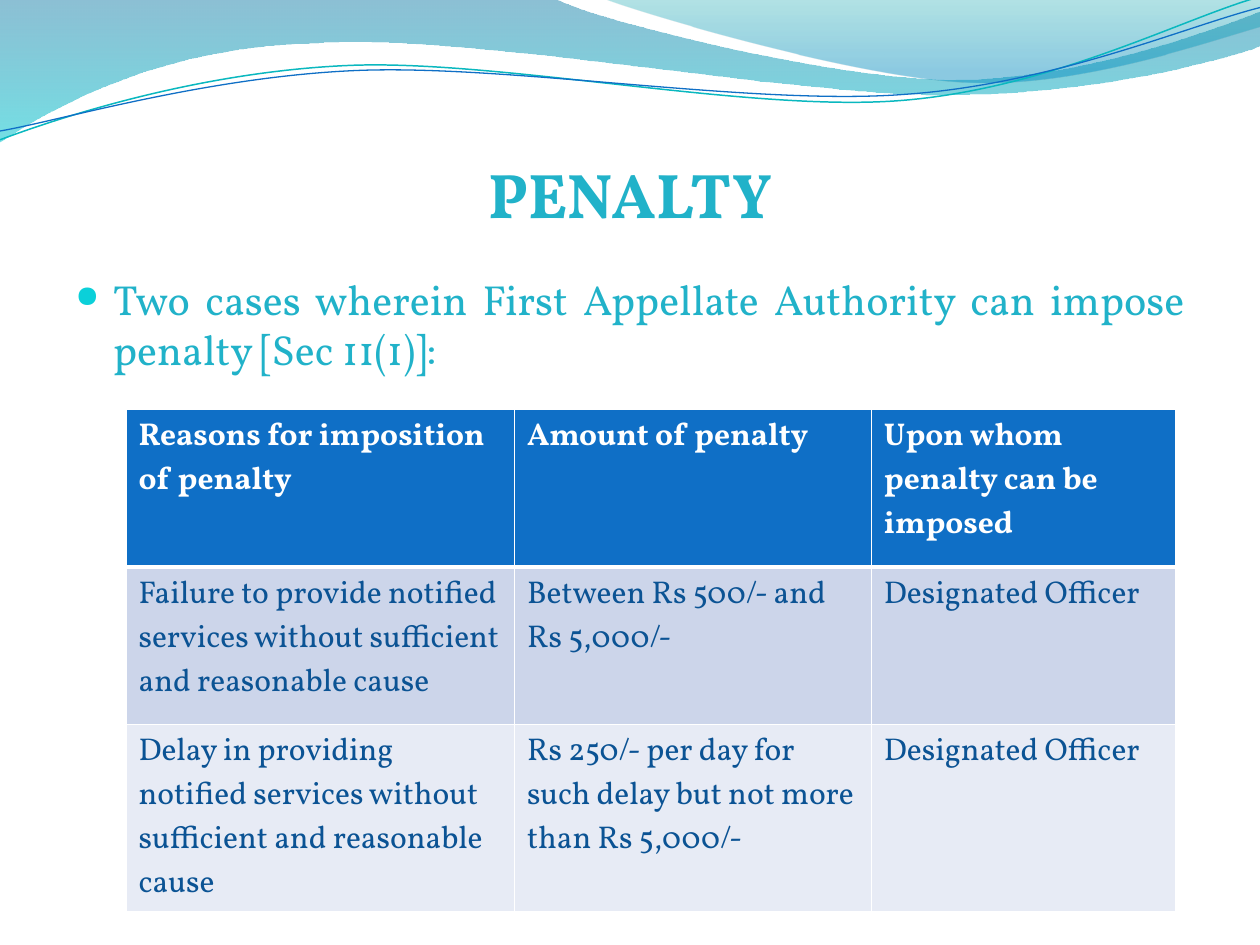
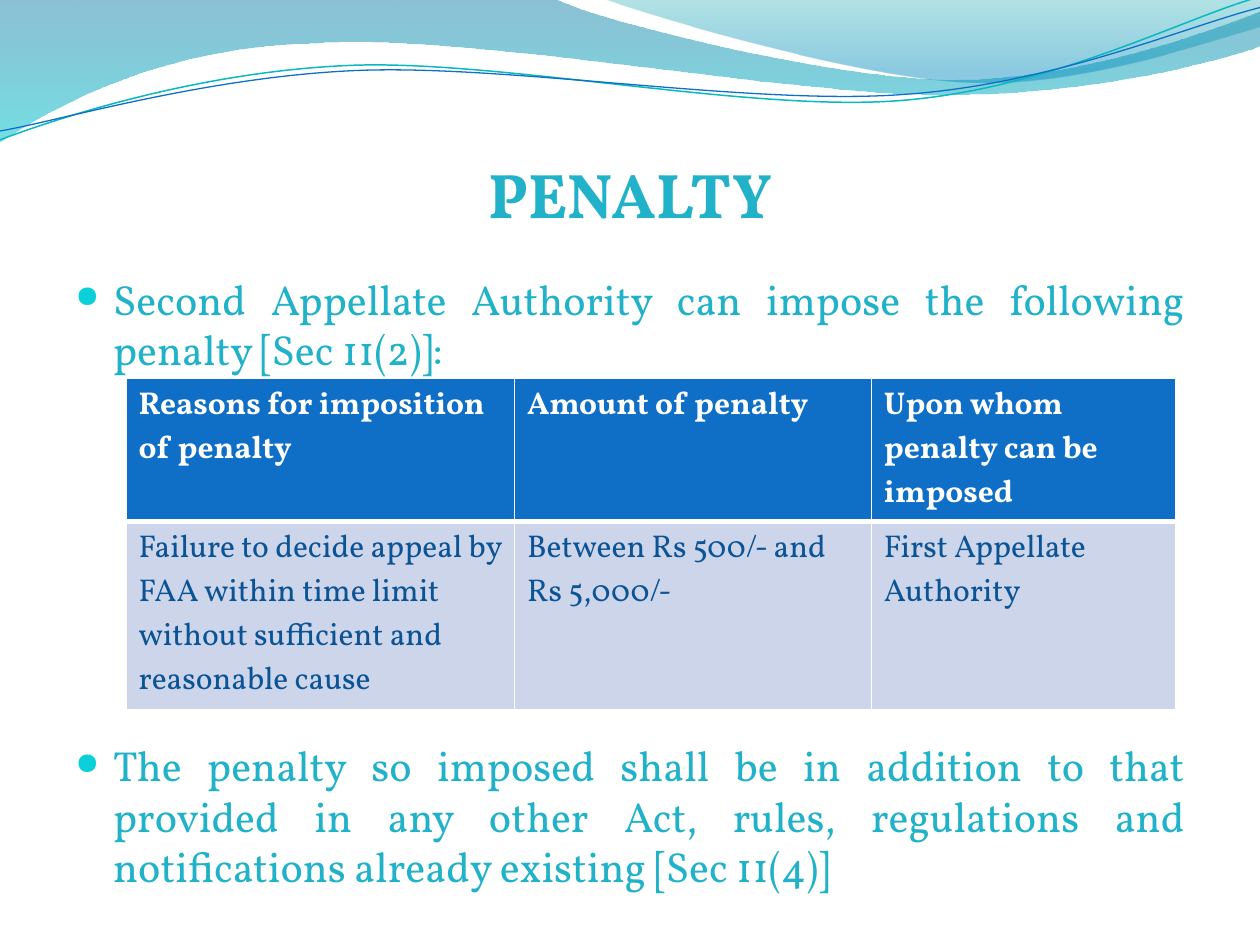
from lxml.etree import SubElement
from pptx import Presentation
from pptx.dml.color import RGBColor
from pptx.enum.text import MSO_ANCHOR as Anchor, MSO_AUTO_SIZE as AutoSize, PP_ALIGN as Align
from pptx.oxml.ns import qn
from pptx.util import Inches, Pt

FONT = "Vollkorn"
GRID_COLUMNS, GRID_ROWS = 100, 75
TITLE_ONLY = 5
COLORS = {
    "text": "21B2C9", "bullet": "0BD0D9", "header": "0F6FC6", "cell_text": "0B5394",
    "band_odd": "CCD5EA", "band_even": "E7EBF5", "white": "FFFFFF",
    "teal_line": "0AB8BF", "blue_line": "0F6FC6",
    "deep_blue": "0074A1", "aqua": "00C6CF", "green": "00A1A9", "sky": "008BBF",
}
WAVE_BANDS = [
    ([[(0, 0)], [(44, -0.1)],
      [(47.6, 1.7), (66.4, 6.3), (75.8, 6.3)], [(85.3, 6.3), (95.8, 2.6), (100, 0.9)],
      [(100.1, 3.6)],
      [(98.3, 4.4), (87, 7.6), (74.6, 7.5)], [(62.2, 7.5), (38.2, 2.8), (25.7, 3.4)],
      [(12.9, 3.6), (4.6, 8.3), (-0.1, 11.3)]],
     [(0, "deep_blue", 45), (1, "aqua", 55)]),
    ([[(47.9, -0.1)],
      [(50.9, 1.1), (68.2, 6.2), (76.9, 6.5)], [(85.6, 6.9), (96.1, 3.2), (100, 2.1)],
      [(100, 0)]],
     [(0, "green", 30), (0.8, "sky", 45)]),
]
WAVE_LINES = [
    ([[(0, 11.1)], [(4.8, 9.3), (15.8, 5.7), (27.7, 5.2)],
      [(39.5, 4.7), (59.3, 8.9), (71.3, 8)], [(83.3, 7.1), (93.8, 1.5), (99.8, -0.2)]],
     "teal_line", 0.85),
    ([[(0, 10.4)], [(4.7, 9.6), (16.4, 6.1), (28.3, 5.6)],
      [(40.3, 5.1), (59.7, 8.4), (71.7, 7.5)], [(83.6, 6.7), (94.1, 2.1), (100, 0.6)]],
     "blue_line", 0.75),
]
TABLE_COLUMNS = [30.83, 28.33, 24.17]
TABLE_HEADER = ["Reasons for imposition of penalty", "Amount of penalty",
                "Upon whom penalty can be imposed"]
FIXED_PENALTY = "Between Rs 500/- and Rs 5,000/-"


def color(name):
    return RGBColor.from_string(COLORS[name])


def bend(shape, segments):
    outline = next(shape.element.iter(qn("a:path")))
    lines = iter(outline.findall(qn("a:lnTo")))
    for segment in segments[1:]:
        parts = [next(lines) for _ in segment]
        if len(parts) == 3:
            curve = SubElement(outline, qn("a:cubicBezTo"))
            parts[0].addprevious(curve)
            for part in parts:
                curve.append(part[0])
                outline.remove(part)


class Deck:
    def __init__(self):
        self.presentation = Presentation()
        self.presentation.slide_width = Inches(10)
        self.presentation.slide_height = Inches(7.5)
        self.layout = self.presentation.slide_layouts[TITLE_ONLY]
        self.slide = None

    def x(self, columns):
        return round(self.presentation.slide_width * columns / GRID_COLUMNS)

    def y(self, rows):
        return round(self.presentation.slide_height * rows / GRID_ROWS)

    def box(self, left, top, width, height):
        return self.x(left), self.y(top), self.x(width), self.y(height)

    def format_runs(self, paragraph, size, color_name, bold=False):
        for run in paragraph.runs:
            run.font.name = FONT
            run.font.size = Pt(size)
            run.font.bold = bold
            run.font.color.rgb = color(color_name)

    def add_slide(self, title):
        first = self.slide is None
        self.slide = self.presentation.slides.add_slide(self.layout)
        if first:
            self.add_waves_to_layout()
        self.title(title)

    def title(self, text):
        shape = self.slide.shapes.title
        shape.left, shape.top, shape.width, shape.height = self.box(5, 7.75, 90, 10.6)
        frame = shape.text_frame
        frame.text = text
        frame.auto_size = AutoSize.NONE
        frame.vertical_anchor = Anchor.BOTTOM
        frame.margin_left = frame.margin_right = frame.margin_bottom = 0
        frame.margin_top = Inches(0.05)
        frame.paragraphs[0].alignment = Align.CENTER
        self.format_runs(frame.paragraphs[0], 36, "text", bold=True)

    def wave(self, segments, closed):
        points = [(self.x(column), self.y(row))
                  for segment in segments for column, row in segment]
        builder = self.slide.shapes.build_freeform(*points[0])
        builder.add_line_segments(points[1:], close=closed)
        shape = builder.convert_to_shape()
        shape.shadow.inherit = False
        bend(shape, segments)
        return shape

    def wave_band(self, segments, stops):
        shape = self.wave(segments, closed=True)
        shape.line.fill.background()
        shape.fill.gradient()
        shape.fill.gradient_angle = 270
        for stop, (position, name, _) in zip(shape.fill.gradient_stops, stops):
            stop.position = position
            stop.color.rgb = color(name)
        for element, (_, _, opacity) in zip(shape.element.iter(qn("a:srgbClr")), stops):
            SubElement(element, qn("a:alpha")).set("val", str(opacity * 1000))
        return shape

    def wave_line(self, segments, name, width):
        shape = self.wave(segments, closed=False)
        shape.fill.background()
        shape.line.color.rgb = color(name)
        shape.line.width = Pt(width)
        return shape

    def add_waves_to_layout(self):
        waves = [self.wave_band(*band) for band in WAVE_BANDS]
        waves += [self.wave_line(*line) for line in WAVE_LINES]
        for position, shape in enumerate(waves, start=2):
            self.layout.shapes.element.insert(position, shape.element)

    def bullets(self, items):
        frame = self.slide.shapes.add_textbox(*self.box(5, 21.2, 90, 48)).text_frame
        frame.word_wrap = True
        for index, (text, space_before) in enumerate(items):
            paragraph = frame.add_paragraph() if index else frame.paragraphs[0]
            paragraph.text = text
            paragraph.alignment = Align.JUSTIFY
            paragraph.space_before = Pt(space_before)
            self.format_runs(paragraph, 24, "text")
            self.bullet_mark(paragraph)

    def bullet_mark(self, paragraph):
        properties = paragraph._p.get_or_add_pPr()
        properties.set("marL", str(Inches(0.3)))
        properties.set("indent", str(-Inches(0.3)))
        mark_color = SubElement(properties, qn("a:buClr"))
        SubElement(mark_color, qn("a:srgbClr")).set("val", COLORS["bullet"])
        SubElement(properties, qn("a:buSzPct")).set("val", "72000")
        SubElement(properties, qn("a:buChar")).set("char", "●")

    def cell_borders(self, cell, row):
        properties = cell._tc.get_or_add_tcPr()
        widths = {"L": 1, "R": 1, "T": 3 if row == 1 else 1, "B": 3 if row == 0 else 1}
        for side, width in widths.items():
            line = SubElement(properties, qn(f"a:ln{side}"))
            line.set("w", str(Pt(width)))
            fill = SubElement(line, qn("a:solidFill"))
            SubElement(fill, qn("a:srgbClr")).set("val", COLORS["white"])

    def table(self, top, row_heights, body):
        rows = [TABLE_HEADER, *body]
        area = self.box(10, top, sum(TABLE_COLUMNS), sum(row_heights))
        table = self.slide.shapes.add_table(len(rows), len(TABLE_COLUMNS), *area).table
        for column, width in zip(table.columns, TABLE_COLUMNS):
            column.width = self.x(width)
        for index, (height, texts) in enumerate(zip(row_heights, rows)):
            table.rows[index].height = self.y(height)
            is_header = index == 0
            band = "header" if is_header else "band_odd" if index % 2 else "band_even"
            for cell, text in zip(table.rows[index].cells, texts):
                cell.text = text
                self.cell_borders(cell, index)
                cell.fill.solid()
                cell.fill.fore_color.rgb = color(band)
                self.format_runs(cell.text_frame.paragraphs[0], 18,
                                 "white" if is_header else "cell_text", bold=is_header)


def main():
    deck = Deck()

    deck.add_slide("PENALTY")
    deck.bullets([
        ("Two cases wherein First Appellate Authority can impose penalty [Sec 11(1)]:", 4.8),
    ])
    deck.table(32.5, [12.5, 12.5, 14.9], [
        ["Failure to provide notified services without sufficient and reasonable cause",
         FIXED_PENALTY, "Designated Officer"],
        ["Delay in providing notified services without sufficient and reasonable cause",
         "Rs 250/- per day for such delay but not more than Rs 5,000/-",
         "Designated Officer"],
    ])

    deck.add_slide("PENALTY")
    deck.bullets([
        ("Second Appellate Authority can impose the following penalty [Sec 11(2)]:", 4.8),
        ("The penalty so imposed shall be in addition to that provided in any other Act, "
         "rules, regulations and notifications already existing [Sec 11(4)]", 209),
    ])
    deck.table(30, [11.4, 14.9], [
        ["Failure to decide appeal by FAA within time limit without sufficient and "
         "reasonable cause", FIXED_PENALTY, "First Appellate Authority"],
    ])

    deck.presentation.save("out.pptx")


if __name__ == "__main__":
    main()
